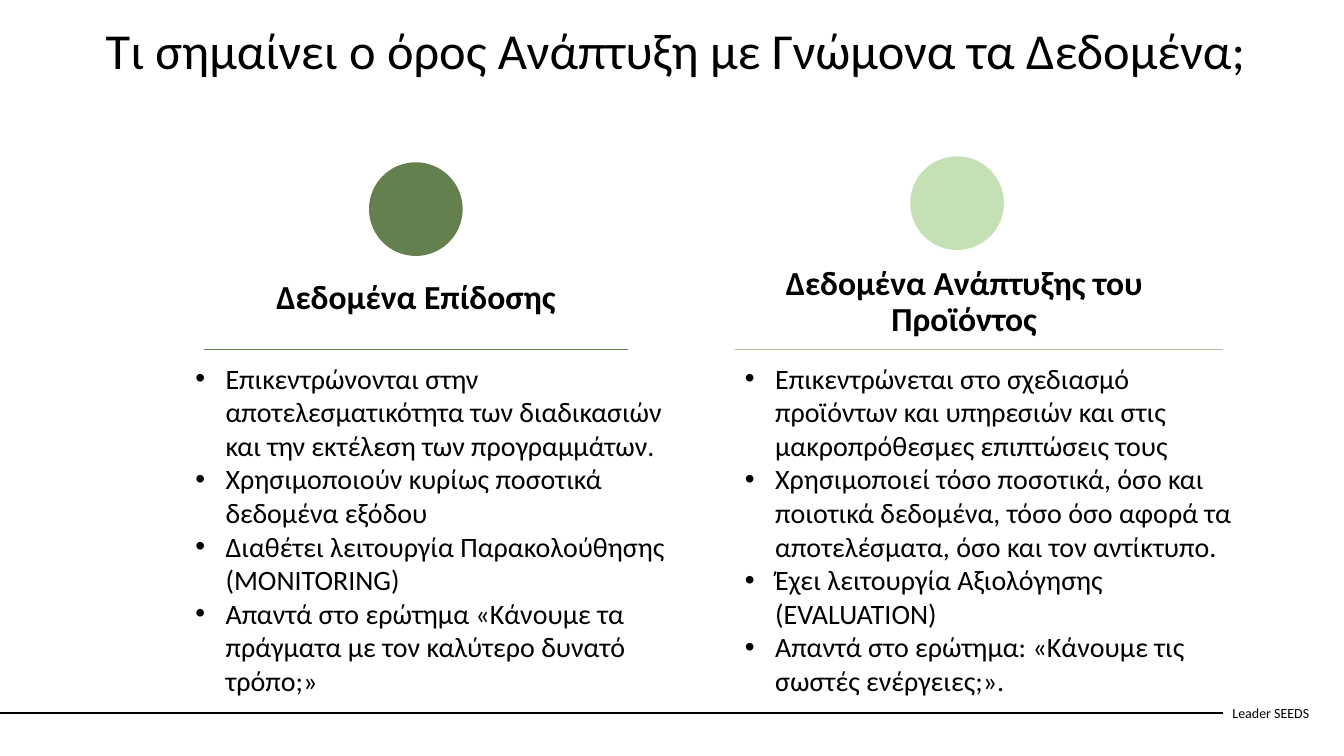
from dataclasses import dataclass

from lxml import etree
from pptx import Presentation
from pptx.dml.color import RGBColor
from pptx.enum.shapes import MSO_CONNECTOR, MSO_SHAPE
from pptx.enum.text import MSO_ANCHOR, MSO_AUTO_SIZE, PP_ALIGN
from pptx.oxml.ns import qn
from pptx.util import Cm, Pt

STRAIGHT = MSO_CONNECTOR.STRAIGHT
OVAL = MSO_SHAPE.OVAL
TOP, MIDDLE = MSO_ANCHOR.TOP, MSO_ANCHOR.MIDDLE
LEFT, CENTER = PP_ALIGN.LEFT, PP_ALIGN.CENTER
NO_AUTOFIT = MSO_AUTO_SIZE.NONE


@dataclass(frozen=True)
class Theme:
    """Colours, font and type sizes of the slide."""
    font: str = "Calibri"
    text: str = "000000"
    dark_green: str = "65804F"
    light_green: str = "C5E0B4"
    soft_green: str = "ACC199"
    title: int = 36
    heading: int = 24
    body: int = 20
    footer: int = 10


@dataclass(frozen=True)
class Column:
    """One kind of data; boxes are left, top, width and height in cm."""
    heading: str
    points: tuple
    box: tuple
    marker: tuple
    heading_box: tuple
    rule: tuple
    marker_color: str
    rule_color: str
    rule_width: float


THEME = Theme()
TITLE = "Τι σημαίνει ο όρος Ανάπτυξη με Γνώμονα τα Δεδομένα;"
FOOTER = "Leader SEEDS"
MARKER_SIZE = 2.36
HEADING_HEIGHT = 2.36
RULE_TOP = 4.87
LIST_TOP = 5.03
COLUMNS = (
    Column(
        "Δεδομένα Επίδοσης",
        (
            "Επικεντρώνονται στην αποτελεσματικότητα των διαδικασιών και την "
            "εκτέλεση των προγραμμάτων.",
            "Χρησιμοποιούν κυρίως ποσοτικά δεδομένα εξόδου",
            "Διαθέτει λειτουργία Παρακολούθησης (MONITORING)",
            "Απαντά στο ερώτημα «Κάνουμε τα πράγματα με τον καλύτερο δυνατό τρόπο;»",
        ),
        box=(4.67, 3.94, 12.37, 13.84), marker=(4.63, 0.15),
        heading_box=(1.55, 2.41, 8.53), rule=(0.46, 11.15),
        marker_color=THEME.dark_green, rule_color=THEME.dark_green, rule_width=0.5,
    ),
    Column(
        "Δεδομένα Ανάπτυξης του Προϊόντος",
        (
            "Επικεντρώνεται στο σχεδιασμό προϊόντων και υπηρεσιών και στις "
            "μακροπρόθεσμες επιπτώσεις τους",
            "Χρησιμοποιεί τόσο ποσοτικά, όσο και ποιοτικά δεδομένα, τόσο όσο "
            "αφορά τα αποτελέσματα, όσο και τον αντίκτυπο.",
            "Έχει λειτουργία Αξιολόγησης (EVALUATION)",
            "Απαντά στο ερώτημα: «Κάνουμε τις σωστές ενέργειες;».",
        ),
        box=(18.52, 3.94, 12.85, 14.68), marker=(4.42, 0),
        heading_box=(0, 2.51, 11.56), rule=(0, 12.29),
        marker_color=THEME.light_green, rule_color=THEME.soft_green, rule_width=1,
    ),
)


def place(shape, left, top, width, height):
    """Move and size a shape, in cm."""
    shape.left, shape.top = Cm(left), Cm(top)
    shape.width, shape.height = Cm(width), Cm(height)


def write(shape, texts, size, anchor, align=LEFT, bold=False, spacing=1.0, bullets=False):
    """Fill a shape with one formatted paragraph per text."""
    frame = shape.text_frame
    frame.text = "\n".join(texts)
    frame.word_wrap = True
    frame.auto_size = NO_AUTOFIT
    frame.vertical_anchor = anchor
    for paragraph in frame.paragraphs:
        paragraph.alignment = align
        paragraph.line_spacing = spacing
        paragraph.space_before = Pt(0)
        if bullets:
            add_bullet(paragraph)
        paragraph.font.name = THEME.font
        paragraph.font.size = Pt(size)
        paragraph.font.bold = bold
        paragraph.font.color.rgb = RGBColor.from_string(THEME.text)


def add_bullet(paragraph):
    """Give a paragraph a round bullet with a hanging indent."""
    properties = paragraph._p.get_or_add_pPr()
    properties.set("marL", str(Cm(0.76)))
    properties.set("indent", str(-Cm(0.76)))
    etree.SubElement(properties, qn("a:buFont")).set("typeface", "Arial")
    etree.SubElement(properties, qn("a:buChar")).set("char", "•")


def add_rule(slide, start, end, top, color, width):
    """Draw a horizontal line without a shadow."""
    rule = slide.shapes.add_connector(STRAIGHT, Cm(start), Cm(top), Cm(end), Cm(top))
    rule.line.color.rgb = RGBColor.from_string(color)
    rule.line.width = Pt(width)
    etree.SubElement(rule._element.spPr, qn("a:effectLst"))


def add_footer(slide, left, top, width, height):
    """Draw the footer line and the project name at its right end."""
    name_width = 2.57
    add_rule(slide, left, left + width - name_width, top + height / 2 + 0.01, THEME.text, 1.5)
    name = slide.shapes.add_textbox(0, 0, 0, 0)
    place(name, left + width - name_width, top, name_width, height)
    write(name, [FOOTER], THEME.footer, MIDDLE)


def add_title(slide, left, top, width, height):
    """Set the slide title."""
    place(slide.shapes.title, left, top, width, height)
    write(slide.shapes.title, [TITLE], THEME.title, TOP, CENTER, spacing=0.9)


def add_column(slide, body, column):
    """Draw a column: marker, heading, rule and bullet list."""
    left, top, width, height = column.box
    marker_left, marker_top = column.marker
    marker = slide.shapes.add_shape(OVAL, 0, 0, 0, 0)
    place(marker, left + marker_left, top + marker_top, MARKER_SIZE, MARKER_SIZE)
    marker.shadow.inherit = False
    marker.fill.solid()
    marker.fill.fore_color.rgb = RGBColor.from_string(column.marker_color)
    marker.line.fill.background()

    heading_left, heading_top, heading_width = column.heading_box
    heading = slide.shapes.add_textbox(0, 0, 0, 0)
    place(heading, left + heading_left, top + heading_top, heading_width, HEADING_HEIGHT)
    write(heading, [column.heading], THEME.heading, MIDDLE, CENTER, bold=True, spacing=0.9)

    start, end = column.rule
    add_rule(slide, left + start, left + end, top + RULE_TOP,
             column.rule_color, column.rule_width)

    place(body, left, top + LIST_TOP, width, height - LIST_TOP)
    write(body, column.points, THEME.body, TOP, bullets=True)


def main():
    """Build and save the presentation."""
    presentation = Presentation()
    presentation.slide_width, presentation.slide_height = Cm(33.87), Cm(19.05)
    slide = presentation.slides.add_slide(presentation.slide_layouts[3])
    add_footer(slide, 0, 17.45, 33.38, 1.02)
    add_title(slide, 2.31, 0.53, 29.44, 2.24)
    for index, column in enumerate(COLUMNS, start=1):
        add_column(slide, slide.placeholders[index], column)
    presentation.save("out.pptx")


if __name__ == "__main__":
    main()
